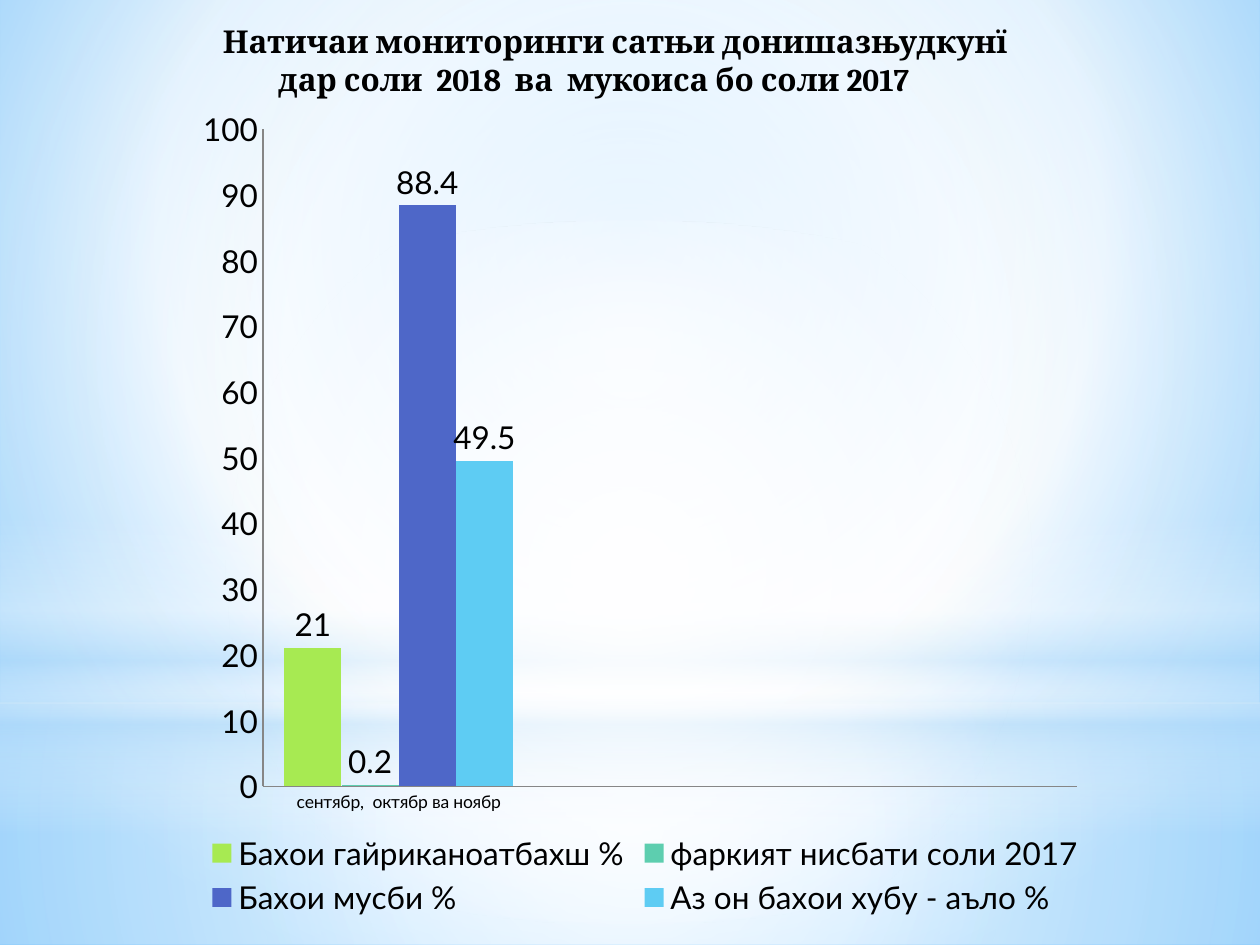
from dataclasses import dataclass

from lxml import etree
from pptx import Presentation
from pptx.chart.data import CategoryChartData
from pptx.dml.color import RGBColor
from pptx.enum.chart import XL_CHART_TYPE, XL_LABEL_POSITION, XL_LEGEND_POSITION, XL_TICK_MARK
from pptx.enum.shapes import MSO_SHAPE
from pptx.enum.text import MSO_ANCHOR, PP_ALIGN
from pptx.oxml import parse_xml
from pptx.oxml.ns import nsdecls, qn
from pptx.util import Pt

COLUMNS = XL_CHART_TYPE.COLUMN_CLUSTERED
OUTSIDE = XL_LABEL_POSITION.OUTSIDE_END
BOTTOM = XL_LEGEND_POSITION.BOTTOM
NO_TICK = XL_TICK_MARK.NONE
RECT, OVAL = MSO_SHAPE.RECTANGLE, MSO_SHAPE.OVAL


@dataclass(frozen=True)
class Theme:
    title_font: str = "Cambria"
    chart_font: str = "Lato"
    text_size: int = 18
    category_size: int = 10
    text: str = "000000"
    axis: str = "868686"
    white: str = "FFFFFF"
    pale: str = "B4DCFA"
    sky: str = "9ED5FF"
    deep_sky: str = "5BB9FF"
    green: str = "A7EA52"
    teal: str = "5DCEAF"
    blue: str = "4E67C8"
    cyan: str = "5ECCF3"


T = Theme()
W, H = 720, 540
CENTER = (50, 50, 50, 50)

# Title lines with their left indents in points
TITLE = [("Натичаи мониторинги сатњи донишазњудкунї", 95),
         ("дар соли  2018  ва  мукоиса бо соли 2017", 126.5)]
CATEGORIES = ["сентябр,  октябр ва ноябр"]
# Name, value, colour and series order number
SERIES = [("Бахои гайриканоатбахш %", 21, T.green, 2),
          ("фаркият нисбати соли 2017", 0.2, T.teal, 3),
          ("Бахои мусби %", 88.4, T.blue, 0),
          ("Аз он бахои хубу - аъло %", 49.5, T.cyan, 1)]
PLOT = {"x": 0.187, "y": 0.023, "w": 0.667, "h": 0.809}


def rgb(color):
    return RGBColor.from_string(color)


def set_gradient(fill, parent, stops, focus=None):
    """Fill with (position, colour, opacity) stops: circular if focus is given, else downward."""
    fill.solid()
    gs = "".join(
        f'<a:gs pos="{pos * 1000}"><a:srgbClr val="{color}">'
        f'<a:alpha val="{alpha * 1000}"/></a:srgbClr></a:gs>'
        for pos, color, alpha in stops)
    if focus:
        sides = " ".join(f'{k}="{v * 1000}"' for k, v in zip("ltrb", focus))
        way = f'<a:path path="circle"><a:fillToRect {sides}/></a:path>'
    else:
        way = '<a:lin ang="5400000" scaled="0"/>'
    grad = parse_xml(f'<a:gradFill {nsdecls("a")} rotWithShape="1">'
                     f'<a:gsLst>{gs}</a:gsLst>{way}</a:gradFill>')
    parent.replace(parent.find(qn("a:solidFill")), grad)


def add_backdrop(s, x, y, w, h):
    # Slide background
    fill = s.background.fill
    fill.solid()
    bg = s._element.find(".//" + qn("p:bgPr"))
    set_gradient(fill, bg, [(0, T.sky, 100), (60, T.white, 100), (100, T.deep_sky, 100)],
                 (20, 10, 20, 60))
    # Translucent layers: shape, top, height, stops, focus
    horizon = 401.76
    layers = [
        (RECT, horizon, h - horizon,
         [(0, T.white, 91), (37, T.white, 76), (100, T.pale, 79)], CENTER),
        (RECT, 0, horizon,
         [(0, T.white, 89), (48, T.white, 62), (100, T.pale, 79)], CENTER),
        (RECT, 296.64, 180,
         [(0, T.white, 0), (29, T.white, 30), (45, T.pale, 40), (55, T.white, 26),
          (65, T.pale, 60), (100, T.white, 0)], None),
        (OVAL, 126, horizon, [(0, T.white, 100), (56, T.white, 0)], CENTER),
    ]
    for kind, top, height, stops, focus in layers:
        sp = s.shapes.add_shape(kind, Pt(x), Pt(y + top), Pt(w), Pt(height))
        sp.shadow.inherit = False
        sp.line.fill.background()
        set_gradient(sp.fill, sp._element.spPr, stops, focus)


def add_title(s, x, y, w, h):
    title = s.shapes.title
    s.shapes._spTree.append(title._element)  # in front of the backdrop
    title.left, title.top, title.width, title.height = Pt(x), Pt(y), Pt(w), Pt(h)
    tf = title.text_frame
    tf.word_wrap = True
    tf.vertical_anchor = MSO_ANCHOR.TOP
    tf.text = "\n".join(line for line, _ in TITLE)
    for p, (_, indent) in zip(tf.paragraphs, TITLE):
        p.alignment = PP_ALIGN.LEFT
        p._p.get_or_add_pPr().set("marL", str(Pt(indent)))
        p.font.name, p.font.size, p.font.bold = T.title_font, Pt(T.text_size), True
        p.font.color.rgb = rgb(T.text)


def set_plot_layout(chart):
    """Fix the inner plot area as fractions of the chart."""
    area = chart._chartSpace.chart.plotArea
    for old in area.findall(qn("c:layout")):
        area.remove(old)
    layout = etree.Element(qn("c:layout"))
    manual = etree.SubElement(layout, qn("c:manualLayout"))
    values = {"layoutTarget": "inner", "xMode": "edge", "yMode": "edge", **PLOT}
    for tag, value in values.items():
        etree.SubElement(manual, qn("c:" + tag)).set("val", str(value))
    area.insert(0, layout)


def add_results_chart(s, x, y, w, h):
    data = CategoryChartData()
    data.categories = CATEGORIES
    for name, value, *_ in SERIES:
        data.add_series(name, [value, None, None])
    chart = s.shapes.add_chart(COLUMNS, Pt(x), Pt(y), Pt(w), Pt(h), data).chart
    chart.has_title = False
    chart.font.name, chart.font.size = T.chart_font, Pt(T.text_size)
    chart.font.color.rgb = rgb(T.text)
    set_plot_layout(chart)

    # Columns and value labels
    plot = chart.plots[0]
    plot.gap_width, plot.overlap, plot.vary_by_categories = 75, 0, False
    for series, (_, _, color, order) in zip(list(plot.series), SERIES):
        series.format.fill.solid()
        series.format.fill.fore_color.rgb = rgb(color)
        series.invert_if_negative = False
        series.data_labels.show_value = True
        series.data_labels.position = OUTSIDE
        series._element.find(qn("c:order")).set("val", str(order))

    # Axes
    for axis in (chart.category_axis, chart.value_axis):
        axis.major_tick_mark = axis.minor_tick_mark = NO_TICK
        axis.has_major_gridlines = False
        axis.format.line.color.rgb = rgb(T.axis)
    chart.category_axis.tick_labels.font.size = Pt(T.category_size)
    values = chart.value_axis
    values.minimum_scale, values.maximum_scale, values.major_unit = 0, 100, 10

    # Legend
    chart.has_legend = True
    chart.legend.position = BOTTOM
    chart.legend.include_in_layout = False


def main():
    prs = Presentation()
    prs.slide_width, prs.slide_height = Pt(W), Pt(H)
    s = prs.slides.add_slide(prs.slide_layouts[5])
    add_backdrop(s, 0, 0, W, H)
    add_title(s, 25.2, 9, 674.64, 51.12)
    add_results_chart(s, 19.8, 63, 697.68, 464.4)
    prs.save("out.pptx")


if __name__ == "__main__":
    main()
